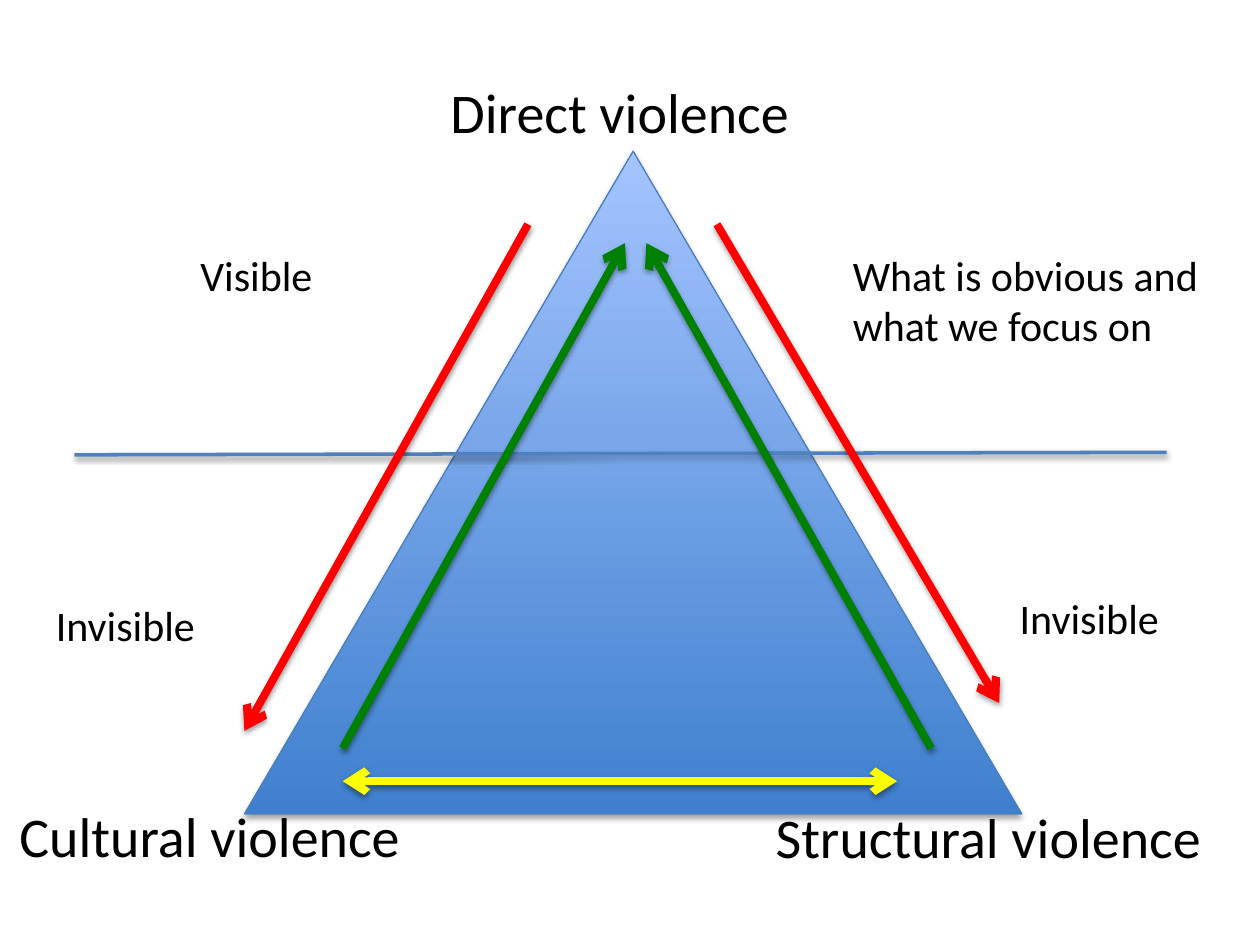
from dataclasses import dataclass

from lxml import etree
from pptx import Presentation
from pptx.dml.color import RGBColor
from pptx.enum.shapes import MSO_CONNECTOR, MSO_SHAPE
from pptx.enum.text import MSO_AUTO_SIZE, PP_ALIGN
from pptx.oxml.ns import qn
from pptx.util import Inches, Pt

STRAIGHT = MSO_CONNECTOR.STRAIGHT
TRIANGLE = MSO_SHAPE.ISOSCELES_TRIANGLE
GROW = MSO_AUTO_SIZE.SHAPE_TO_FIT_TEXT
LEFT, CENTER = PP_ALIGN.LEFT, PP_ALIGN.CENTER

GREEN, RED, YELLOW = "008000", "FF0000", "FFFF00"
ARROW_WIDTH = 4.5
CORNER_SIZE, NOTE_SIZE = 32, 24


@dataclass(frozen=True)
class Label:
    text: str
    left: float
    top: float
    width: float
    height: float
    size: int = NOTE_SIZE
    align: PP_ALIGN = CENTER


@dataclass(frozen=True)
class Stroke:
    start: tuple[float, float]
    end: tuple[float, float]
    color: str
    width: float = ARROW_WIDTH
    ends: tuple[str, ...] = ("tailEnd",)


WATERLINE = Stroke((0.59, 3.61), (9.26, 3.59), "4F81BD", 2, ())

ARROWS = [
    Stroke((2.72, 5.94), (4.96, 1.93), GREEN),
    Stroke((7.39, 5.94), (5.13, 1.93), GREEN),
    Stroke((4.19, 1.78), (1.94, 5.8), RED),
    Stroke((5.69, 1.78), (7.93, 5.58), RED),
    Stroke((2.72, 6.2), (7.12, 6.2), YELLOW, ends=("headEnd", "tailEnd")),
]

LABELS = [
    Label("Visible", 0.74, 1.93, 2.59, 0.5),
    Label("Direct violence", 2.72, 0.57, 4.4, 0.64, CORNER_SIZE),
    Label("Structural violence", 5.72, 6.32, 4.25, 0.64, CORNER_SIZE),
    Label("Cultural violence", 0, 6.31, 3.33, 1.18, CORNER_SIZE),
    Label("What is obvious and what we focus on", 6.67, 1.93, 3.33, 0.91, align=LEFT),
    Label("Invisible", -0.3, 4.71, 2.59, 0.5),
    Label("Invisible", 7.35, 4.65, 2.59, 0.5),
]


def rgb(color: str) -> RGBColor:
    return RGBColor.from_string(color)


def add_shadow(shape, opacity: int, distance: float) -> None:
    """Give a shape a soft black shadow straight below it."""
    effects = etree.SubElement(shape._element.spPr, qn("a:effectLst"))
    shadow = etree.SubElement(
        effects, qn("a:outerShdw"), blurRad=str(Pt(3.1)), dist=str(Pt(distance)),
        dir="5400000", rotWithShape="0")
    black = etree.SubElement(shadow, qn("a:srgbClr"), val="000000")
    etree.SubElement(black, qn("a:alpha"), val=str(opacity * 1000))


def draw_triangle(slide) -> None:
    triangle = slide.shapes.add_shape(
        TRIANGLE, Inches(1.94), Inches(1.2), Inches(6.17), Inches(5.26))
    triangle.fill.gradient()
    triangle.fill.gradient_angle = 90
    for stop, color in zip(triangle.fill.gradient_stops, ("3F80CE", "A4C4FF")):
        stop.color.rgb = rgb(color)
    triangle.line.color.rgb = rgb("4B7EBC")
    triangle.line.width = Pt(0.75)
    add_shadow(triangle, 35, 1.8)


def draw_stroke(slide, stroke: Stroke) -> None:
    points = [Inches(value) for value in stroke.start + stroke.end]
    connector = slide.shapes.add_connector(STRAIGHT, *points)
    connector.line.color.rgb = rgb(stroke.color)
    connector.line.width = Pt(stroke.width)
    outline = connector.line._get_or_add_ln()
    for end in stroke.ends:
        etree.SubElement(outline, qn(f"a:{end}"), type="arrow")
    add_shadow(connector, 38, 1.6)


def draw_label(slide, label: Label) -> None:
    place = (label.left, label.top, label.width, label.height)
    frame = slide.shapes.add_textbox(*map(Inches, place)).text_frame
    frame.word_wrap = True
    frame.auto_size = GROW
    paragraph = frame.paragraphs[0]
    paragraph.alignment = label.align
    run = paragraph.add_run()
    run.text = label.text
    run.font.color.rgb = rgb("000000")
    for name, value in {"name": "Calibri", "size": Pt(label.size)}.items():
        setattr(run.font, name, value)


def main() -> None:
    deck = Presentation()
    deck.slide_width, deck.slide_height = Inches(10), Inches(7.5)
    slide = deck.slides.add_slide(deck.slide_layouts[6])

    # Triangle of violence and the line between visible and invisible
    draw_triangle(slide)
    draw_stroke(slide, WATERLINE)

    # Influences between the corners
    for arrow in ARROWS:
        draw_stroke(slide, arrow)

    # Corner names and side notes
    for label in LABELS:
        draw_label(slide, label)

    deck.save("out.pptx")


if __name__ == "__main__":
    main()
